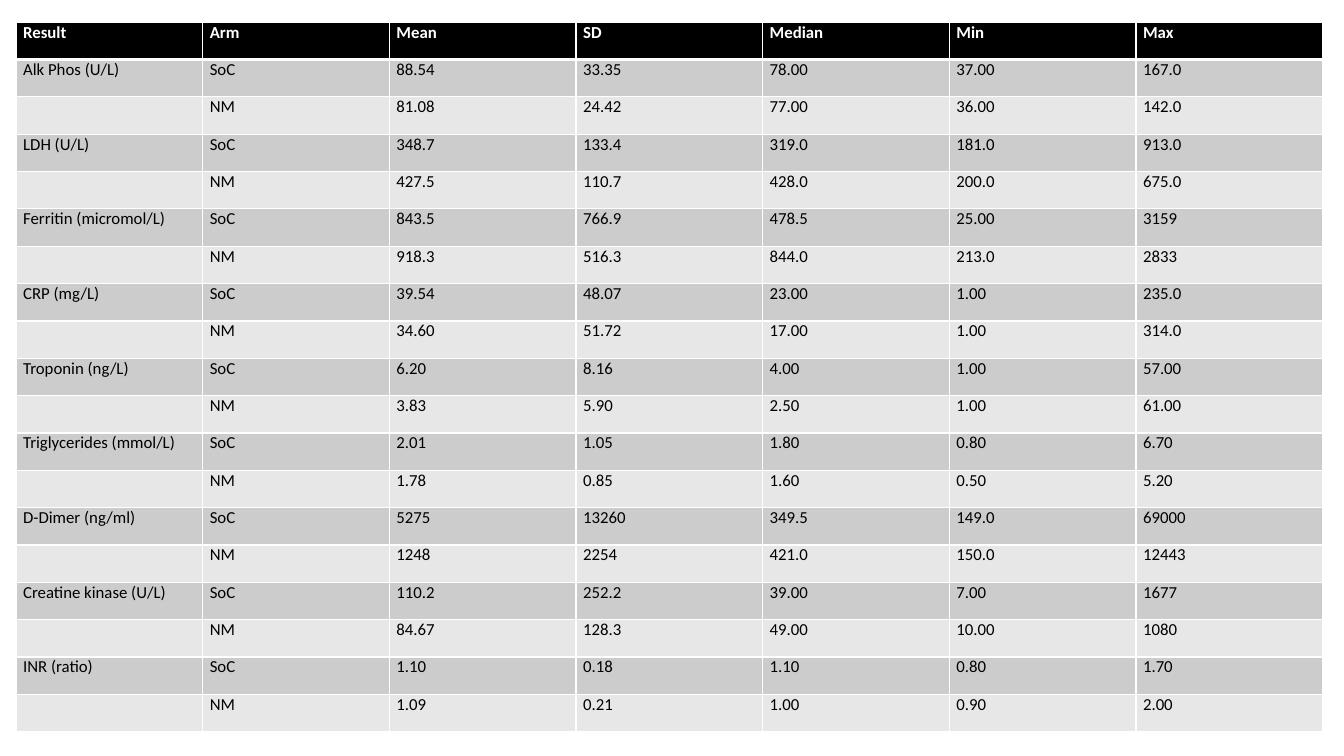
from lxml import etree
from pptx import Presentation
from pptx.dml.color import RGBColor
from pptx.oxml.ns import qn
from pptx.util import Inches, Pt

FONT = "Calibri"
SIZE = 12
BLANK = 6
COLORS = {
    "head": "000000",
    "dark": "CCCCCC",
    "light": "E7E7E7",
    "text": "000000",
    "white": "FFFFFF",
}
EDGES = {"lnL": 1, "lnR": 1, "lnT": 1, "lnB": 3}

HEADS = ["Result", "Arm", "Mean", "SD", "Median", "Min", "Max"]
ARMS = ["SoC", "NM"]
TESTS = [
    ("Alk Phos (U/L)", "88.54 33.35 78.00 37.00 167.0", "81.08 24.42 77.00 36.00 142.0"),
    ("LDH (U/L)", "348.7 133.4 319.0 181.0 913.0", "427.5 110.7 428.0 200.0 675.0"),
    ("Ferritin (micromol/L)", "843.5 766.9 478.5 25.00 3159", "918.3 516.3 844.0 213.0 2833"),
    ("CRP (mg/L)", "39.54 48.07 23.00 1.00 235.0", "34.60 51.72 17.00 1.00 314.0"),
    ("Troponin (ng/L)", "6.20 8.16 4.00 1.00 57.00", "3.83 5.90 2.50 1.00 61.00"),
    ("Triglycerides (mmol/L)", "2.01 1.05 1.80 0.80 6.70", "1.78 0.85 1.60 0.50 5.20"),
    ("D-Dimer (ng/ml)", "5275 13260 349.5 149.0 69000", "1248 2254 421.0 150.0 12443"),
    ("Creatine kinase (U/L)", "110.2 252.2 39.00 7.00 1677", "84.67 128.3 49.00 10.00 1080"),
    ("INR (ratio)", "1.10 0.18 1.10 0.80 1.70", "1.09 0.21 1.00 0.90 2.00"),
]


def color(name):
    return RGBColor.from_string(COLORS[name])


def list_rows():
    rows = [HEADS]
    for test, *stats in TESTS:
        for label, arm, line in zip((test, ""), ARMS, stats):
            rows.append([label, arm, *line.split()])
    return rows


def add_edges(cell):
    props = cell._tc.get_or_add_tcPr()
    for tag, width in EDGES.items():
        line = etree.SubElement(props, qn(f"a:{tag}"), w=str(Pt(width)))
        fill = etree.SubElement(line, qn("a:solidFill"))
        etree.SubElement(fill, qn("a:srgbClr"), val=COLORS["white"])


def fill_cell(cell, text, back, ink, bold):
    cell.margin_left = cell.margin_right = Inches(0.07)
    cell.margin_top = cell.margin_bottom = 0
    cell.fill.solid()
    cell.fill.fore_color.rgb = color(back)
    if not text:
        return
    run = cell.text_frame.paragraphs[0].add_run()
    run.text = text
    run.font.name = FONT
    run.font.size = Pt(SIZE)
    run.font.bold = bold
    run.font.color.rgb = color(ink)


def add_results(slide, left, top, width, height):
    rows = list_rows()
    box = [Inches(n) for n in (left, top, width, height)]
    table = slide.shapes.add_table(len(rows), len(HEADS), *box).table
    for col in table.columns:
        col.width = Inches(width / len(HEADS))
    for r, row in enumerate(rows):
        table.rows[r].height = Inches(height / len(rows))
        head = r == 0
        back = "head" if head else ("dark" if r % 2 else "light")
        ink = "white" if head else "text"
        for c, text in enumerate(row):
            cell = table.cell(r, c)
            if head:
                add_edges(cell)
            fill_cell(cell, text, back, ink, head)


def main():
    deck = Presentation()
    deck.slide_width = Inches(13.33)
    deck.slide_height = Inches(7.5)
    slide = deck.slides.add_slide(deck.slide_layouts[BLANK])
    add_results(slide, 0.16, 0.22, 12.96, 7.04)
    deck.save("out.pptx")


if __name__ == "__main__":
    main()
